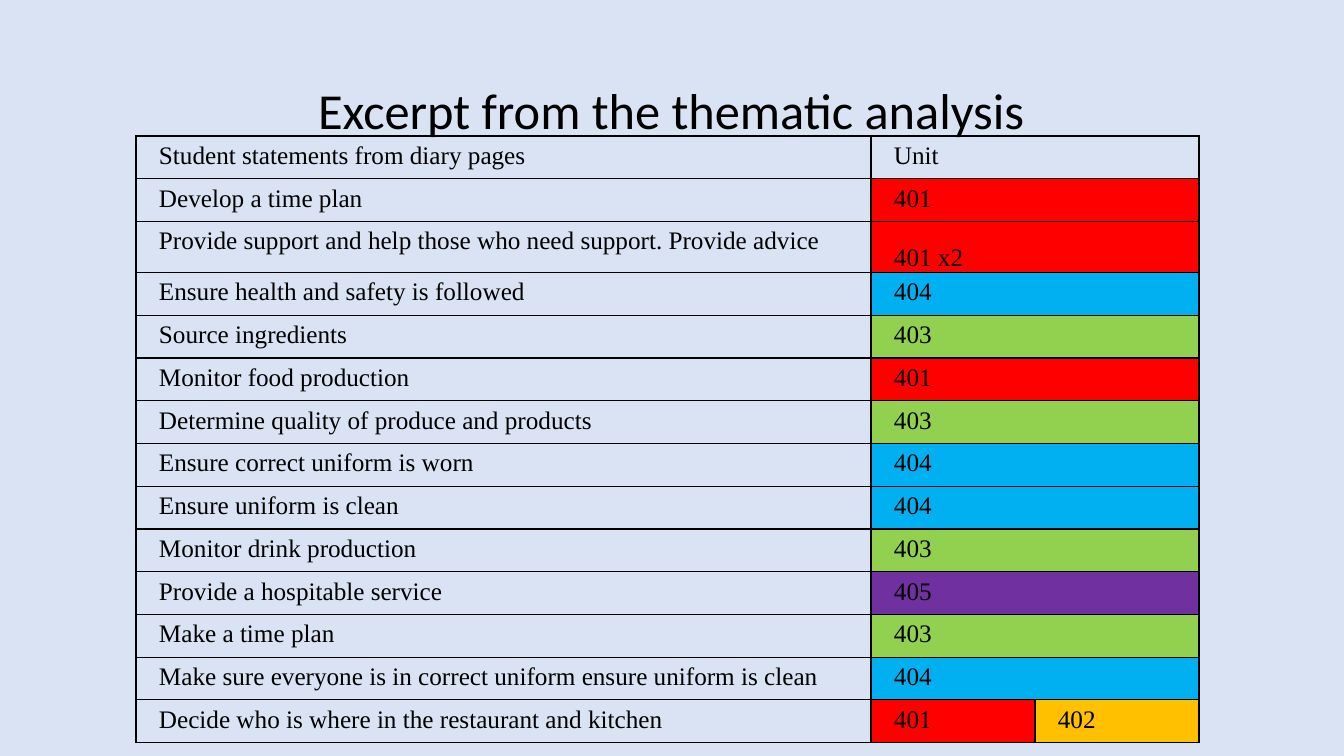
from lxml import etree
from pptx import Presentation
from pptx.dml.color import RGBColor
from pptx.enum.text import MSO_ANCHOR, PP_ALIGN
from pptx.oxml.ns import qn
from pptx.util import Pt

CENTER = PP_ALIGN.CENTER
JUSTIFY = PP_ALIGN.JUSTIFY
MIDDLE = MSO_ANCHOR.MIDDLE
TOP = MSO_ANCHOR.TOP
EMU_PER_PX = 914400 / 100.8

BACKGROUND = "DAE3F3"
BLACK = "000000"
UNIT_COLOURS = {
    "401": "FF0000",
    "402": "FFC000",
    "403": "92D050",
    "404": "00B0F0",
    "405": "7030A0",
}
STATEMENTS = [
    ("Student statements from diary pages", "Unit"),
    ("Develop a time plan", "401"),
    ("Provide support and help those who need support. Provide advice", "401 x2"),
    ("Ensure health and safety is followed", "404"),
    ("Source ingredients", "403"),
    ("Monitor food production", "401"),
    ("Determine quality of produce and products", "403"),
    ("Ensure correct uniform is worn", "404"),
    ("Ensure uniform is clean", "404"),
    ("Monitor drink production", "403"),
    ("Provide a hospitable service", "405"),
    ("Make a time plan", "403"),
    ("Make sure everyone is in correct uniform ensure uniform is clean", "404"),
    ("Decide who is where in the restaurant and kitchen", "401", "402"),
]
COLUMN_WIDTHS = [735, 164, 164]
TABLE_HEIGHT = 607
TALL_ROW = 2
TALL_ROW_HEIGHT = 51
LINE_HEIGHT = 17


def px(length):
    return round(length * EMU_PER_PX)


def colour(value):
    return RGBColor.from_string(value)


class SlideBuilder:
    title_font = "Calibri"
    table_font = "Times New Roman"

    def __init__(self, presentation):
        self.slide = presentation.slides.add_slide(presentation.slide_layouts[5])
        fill = self.slide.background.fill
        fill.solid()
        fill.fore_color.rgb = colour(BACKGROUND)

    def style(self, paragraph, font_name, size, alignment, spacing):
        paragraph.alignment = alignment
        paragraph.line_spacing = spacing
        paragraph.font.name = font_name
        paragraph.font.size = Pt(size)
        paragraph.font.bold = False
        paragraph.font.color.rgb = colour(BLACK)

    def title(self, text, left, top, width, height):
        shape = self.slide.shapes.title
        shape.left, shape.top = px(left), px(top)
        shape.width, shape.height = px(width), px(height)
        frame = shape.text_frame
        frame.text = text
        frame.vertical_anchor = MIDDLE
        self.style(frame.paragraphs[0], self.title_font, 36, CENTER, 0.9)

    def table(self, rows, left, top):
        table = self.slide.shapes.add_table(
            len(rows), len(COLUMN_WIDTHS), px(left), px(top),
            px(sum(COLUMN_WIDTHS)), px(TABLE_HEIGHT),
        ).table
        table.first_row = table.horz_banding = False
        for column, width in zip(table.columns, COLUMN_WIDTHS):
            column.width = px(width)
        row_height = (TABLE_HEIGHT - TALL_ROW_HEIGHT) / (len(rows) - 1)
        for index, texts in enumerate(rows):
            is_tall = index == TALL_ROW
            table.rows[index].height = px(TALL_ROW_HEIGHT if is_tall else row_height)
            cells = [table.cell(index, column) for column in range(len(COLUMN_WIDTHS))]
            for cell in cells:
                self.borders(cell)
            if len(texts) < len(cells):
                cells[1].merge(cells[2])
            for cell, text in zip(cells, texts):
                self.cell(cell, text, LINE_HEIGHT * (2 if is_tall and cell is cells[1] else 1))

    def cell(self, cell, text, margin_top):
        cell.text = text
        cell.vertical_anchor = TOP
        cell.margin_left, cell.margin_right = px(23), px(7)
        cell.margin_top, cell.margin_bottom = px(margin_top), 0
        self.style(cell.text_frame.paragraphs[0], self.table_font, 18, JUSTIFY, Pt(12))
        unit_colour = UNIT_COLOURS.get(text[:3])
        if unit_colour:
            cell.fill.solid()
            cell.fill.fore_color.rgb = colour(unit_colour)
        else:
            cell.fill.background()

    def borders(self, cell):
        properties = cell._tc.get_or_add_tcPr()
        for side in ("a:lnL", "a:lnR", "a:lnT", "a:lnB"):
            line = etree.SubElement(properties, qn(side), w=str(Pt(1)))
            fill = etree.SubElement(line, qn("a:solidFill"))
            etree.SubElement(fill, qn("a:srgbClr"), val=BLACK)


def main():
    presentation = Presentation()
    presentation.slide_width, presentation.slide_height = px(1344), px(756)
    builder = SlideBuilder(presentation)
    builder.title("Excerpt from the thematic analysis", 92, 40, 1159, 146)
    builder.table(STATEMENTS, 136, 136)
    presentation.save("out.pptx")


if __name__ == "__main__":
    main()
